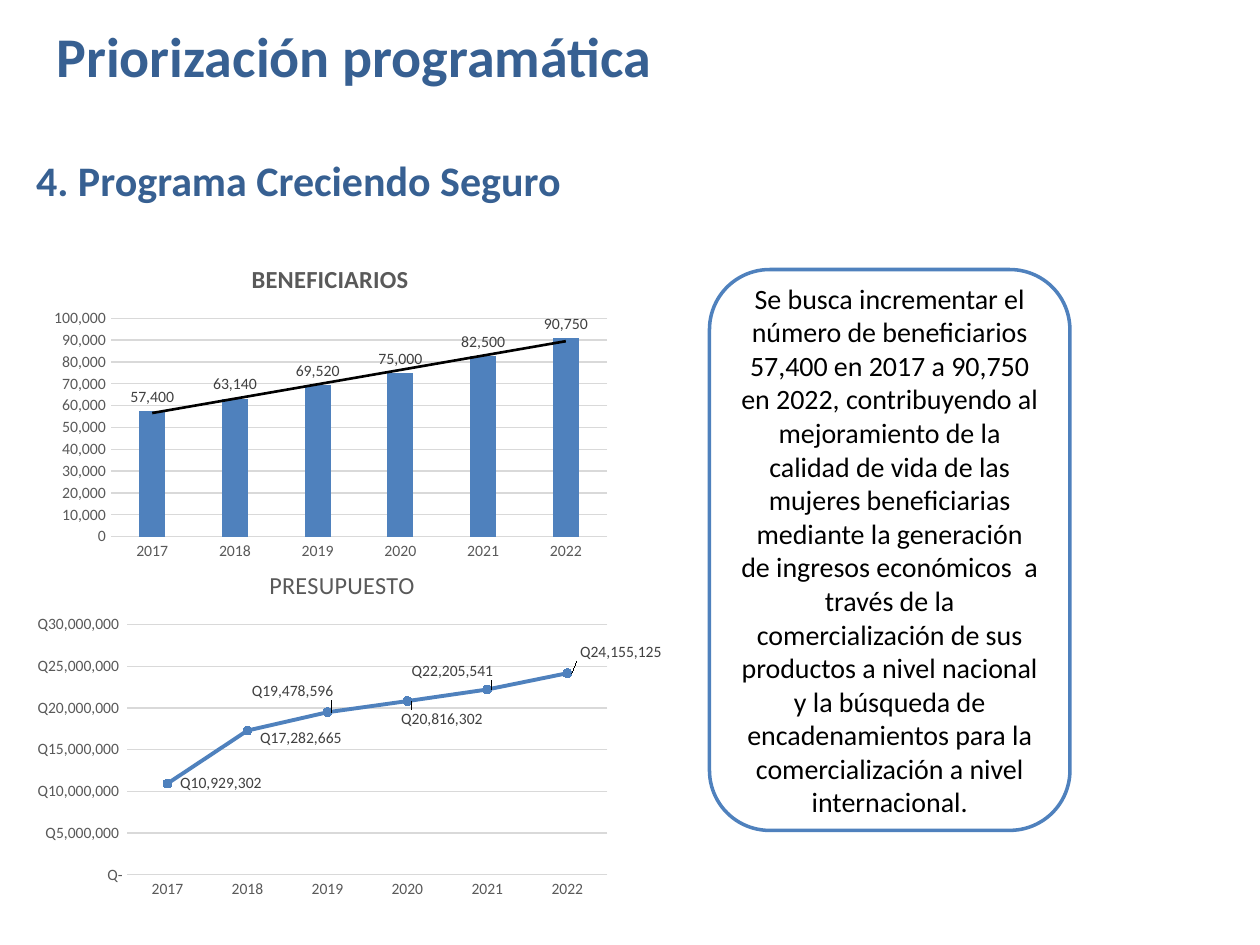
import pptx
import pptx.chart.data
import pptx.dml.color
import pptx.enum.chart
import pptx.enum.dml
import pptx.enum.shapes
import pptx.enum.text
import pptx.oxml
import pptx.oxml.ns
import pptx.util

Pt = pptx.util.Pt
Enum = pptx.enum.chart

THEME = {
    "font": "Calibri",
    "head": "376092", "blue": "4F81BD", "grid": "D9D9D9", "axis": "595959",
    "label": "404040", "black": "000000", "white": "FFFFFF",
    "title": 32, "sub": 24, "body": 16, "name": 14, "chart": 10, "small": 9,
}

TITLE = ("Priorización programática", (25, 11.5, 375, 39.6))
SUB = ("4. Programa Creciendo Seguro", (13.5, 83, 646.5, 39.6))
NOTE = (
    "Se busca incrementar el número de beneficiarios 57,400 en 2017 a 90,750 "
    "en 2022, contribuyendo al mejoramiento de la calidad de vida de las "
    "mujeres beneficiarias mediante la generación de ingresos económicos  a "
    "través de la comercialización de sus productos a nivel nacional y la "
    "búsqueda de encadenamientos para la comercialización a nivel "
    "internacional.",
    (405.4, 154, 206, 320.5),
)
YEARS = [str(year) for year in range(2017, 2023)]
# "plot" is the inner plot area as fractions of the chart: x, y, width, height
PEOPLE = {
    "name": "BENEFICIARIOS", "bold": True, "kind": Enum.XL_CHART_TYPE.COLUMN_CLUSTERED,
    "box": (23.8, 139.7, 329.8, 183.6), "plot": (0.12, 0.23, 0.86, 0.68),
    "format": "#,##0", "top": 100000, "step": 10000,
    "values": [57400, 63140, 69520, 75000, 82500, 90750],
}
BUDGET = {
    "name": "PRESUPUESTO", "bold": False, "kind": Enum.XL_CHART_TYPE.LINE_MARKERS,
    "box": (15.1, 313.9, 365, 204.5), "plot": (0.16, 0.21, 0.76, 0.7),
    "format": '_-"Q"* #,##0_-;\\-"Q"* #,##0_-;_-"Q"* "-"',
    "top": 30000000, "step": 5000000,
    "values": [10929302, 17282665, 19478596, 20816302, 22205541, 24155125],
}
# Label shifts from the right of each point, as fractions of the chart
SHIFTS = [(0, 0), (0, 0.02), (-0.14, -0.06), (-0.03, 0.05), (-0.14, -0.05), (0, -0.06)]


def rgb(key):
    return pptx.dml.color.RGBColor.from_string(THEME[key])


def style(font, size, color, bold=False):
    font.name = THEME["font"]
    font.size = Pt(THEME[size])
    font.color.rgb = rgb(color)
    font.bold = bold


def paint(fill, color):
    fill.solid()
    fill.fore_color.rgb = rgb(color)


def stroke(line, color, width):
    line.color.rgb = rgb(color)
    line.width = Pt(width)


def write(shape, text, size, color, bold=False, align="LEFT"):
    frame = shape.text_frame
    frame.word_wrap = True
    frame.auto_size = pptx.enum.text.MSO_AUTO_SIZE.NONE
    frame.vertical_anchor = pptx.enum.text.MSO_ANCHOR.MIDDLE
    frame.text = text
    para = frame.paragraphs[0]
    para.alignment = getattr(pptx.enum.text.PP_ALIGN, align)
    style(para.font, size, color, bold)


def node(tag, inner):
    space = pptx.oxml.ns.nsdecls("c", "a")
    return pptx.oxml.parse_xml(f"<c:{tag} {space}>{inner}</c:{tag}>")


def layout(modes, places):
    parts = [f'<c:{key} val="{val}"/>' for key, val in [*modes.items(), *places.items()]]
    return node("layout", f'<c:manualLayout>{"".join(parts)}</c:manualLayout>')


def place(chart, plot):
    """Fix the inner plot area inside the chart."""
    area = chart._chartSpace.xpath("c:chart/c:plotArea")[0]
    for old in area.xpath("c:layout"):
        area.remove(old)
    modes = {"layoutTarget": "inner", "xMode": "edge", "yMode": "edge"}
    area.insert(0, layout(modes, dict(zip("xywh", plot))))


def draw(slide, item):
    """Add a one-series chart with its shared look."""
    data = pptx.chart.data.CategoryChartData(number_format=item["format"])
    data.categories = YEARS
    data.add_series(item["name"], item["values"])
    chart = slide.shapes.add_chart(item["kind"], *map(Pt, item["box"]), data).chart
    style(chart.font, "chart", "black")
    chart.has_legend = False
    chart.has_title = True
    chart.chart_title.include_in_layout = False
    frame = chart.chart_title.text_frame
    frame.text = item["name"]
    style(frame.paragraphs[0].font, "name", "axis", item["bold"])
    place(chart, item["plot"])

    cat, val = chart.category_axis, chart.value_axis
    for axis in (cat, val):
        axis.major_tick_mark = axis.minor_tick_mark = Enum.XL_TICK_MARK.NONE
        style(axis.tick_labels.font, "small", "axis")
    stroke(cat.format.line, "grid", 0.75)
    val.format.line.fill.background()
    stroke(val.major_gridlines.format.line, "grid", 0.75)
    val.minimum_scale, val.maximum_scale = 0, item["top"]
    val.major_unit = item["step"]
    val.tick_labels.number_format = item["format"]
    val.tick_labels.number_format_is_linked = False

    plot = chart.plots[0]
    plot.vary_by_categories = False
    series = plot.series[0]
    labels = series.data_labels
    labels.show_value = True
    labels.number_format = item["format"]
    labels.number_format_is_linked = False
    style(labels.font, "small", "label")
    return plot, series


def bars(slide):
    plot, series = draw(slide, PEOPLE)
    plot.gap_width, plot.overlap = 219, -27
    paint(series.format.fill, "blue")
    series.data_labels.position = Enum.XL_LABEL_POSITION.OUTSIDE_END
    trend = node("trendline", (
        f'<c:spPr><a:ln w="{Pt(1.5)}"><a:solidFill><a:srgbClr val="{THEME["black"]}"/>'
        '</a:solidFill></a:ln></c:spPr><c:trendlineType val="linear"/>'
        '<c:dispRSqr val="0"/><c:dispEq val="0"/>'))
    series._element.xpath("c:cat")[0].addprevious(trend)


def curve(slide):
    _, series = draw(slide, BUDGET)
    series.smooth = False
    stroke(series.format.line, "blue", 2.25)
    mark = series.marker
    mark.style, mark.size = Enum.XL_MARKER_STYLE.CIRCLE, 5
    paint(mark.format.fill, "blue")
    stroke(mark.format.line, "blue", 0.75)
    for i in range(len(SHIFTS)):
        label = series.points[i].data_label
        style(label.font, "small", "label")
        label.position = Enum.XL_LABEL_POSITION.RIGHT
    spots = series._element.xpath("c:dLbls/c:dLbl/c:idx")
    for spot, shift in zip(spots, SHIFTS):
        spot.addnext(layout({}, dict(zip("xy", shift))))


def main():
    deck = pptx.Presentation()
    deck.slide_width, deck.slide_height = Pt(720), Pt(540)
    slide = deck.slides.add_slide(deck.slide_layouts[5])
    shapes = slide.shapes

    text, box = TITLE
    title = shapes.title
    title.left, title.top, title.width, title.height = map(Pt, box)
    write(title, text, "title", "head", True)

    text, box = SUB
    write(shapes.add_textbox(*map(Pt, box)), text, "sub", "head", True)

    text, box = NOTE
    kind = pptx.enum.shapes.MSO_SHAPE.ROUNDED_RECTANGLE
    note = shapes.add_shape(kind, *map(Pt, box))
    note.shadow.inherit = False
    paint(note.fill, "white")
    stroke(note.line, "blue", 2)
    write(note, text, "body", "black", align="CENTER")

    bars(slide)
    curve(slide)
    deck.save("out.pptx")


if __name__ == "__main__":
    main()
